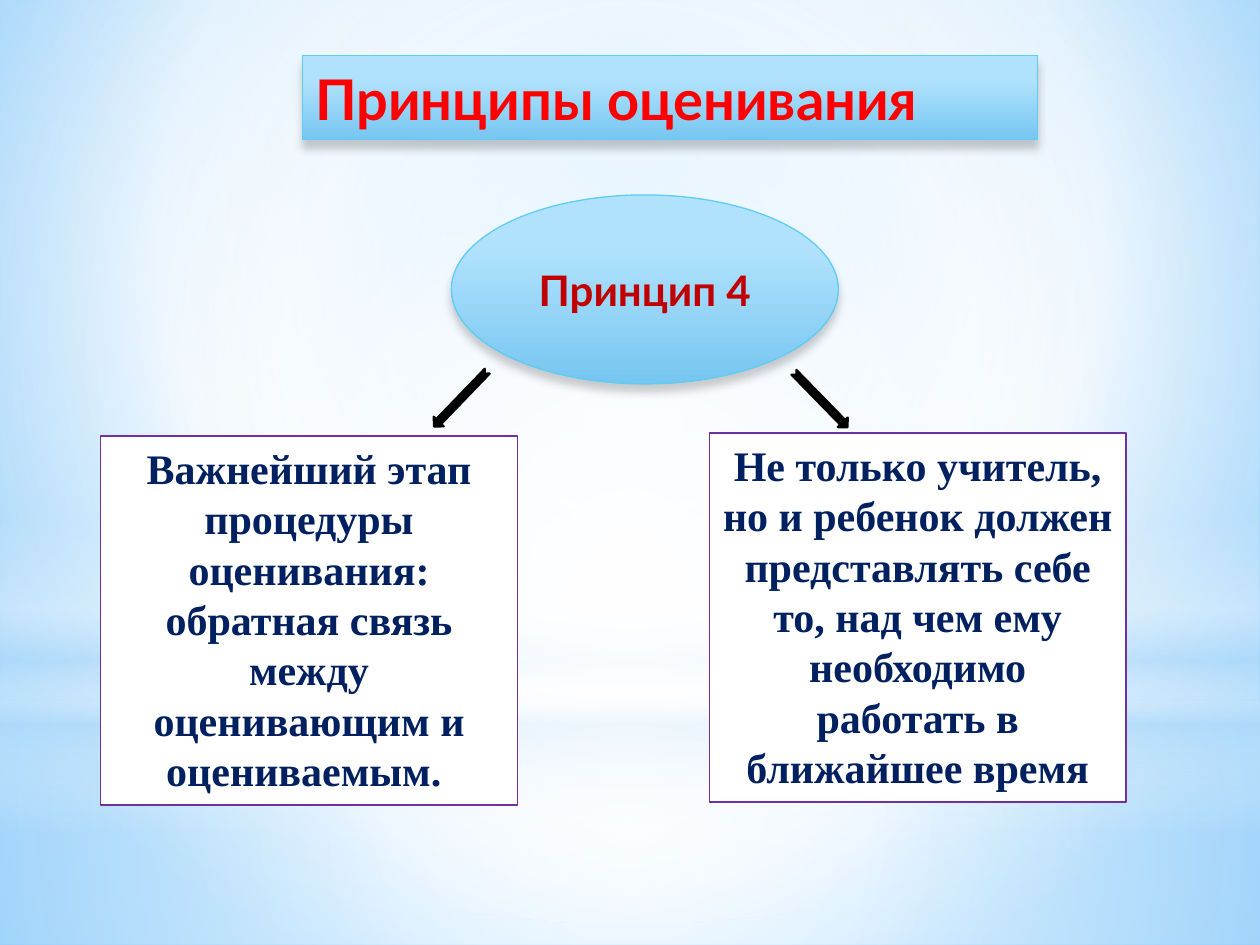
"""Build the slide on the fourth principle of assessment."""
from lxml.etree import SubElement
from pptx import Presentation
from pptx.dml.color import RGBColor
from pptx.enum.shapes import MSO_SHAPE as SHAPE
from pptx.enum.text import MSO_ANCHOR as ANCHOR, MSO_AUTO_SIZE as AUTO, PP_ALIGN as ALIGN
from pptx.oxml import parse_xml
from pptx.oxml.ns import nsdecls, qn
from pptx.util import Cm, Pt

rgb = RGBColor.from_string


def set_gradient(fill, props, stops, focus=None):
    """Fill with (position, colour, opacity) stops, circular around focus or top to bottom."""
    fill.solid()
    marks = "".join(
        f'<a:gs pos="{pos * 1000}"><a:srgbClr val="{color}">'
        f'<a:alpha val="{opacity * 1000}"/></a:srgbClr></a:gs>'
        for pos, color, opacity in stops)
    shade = '<a:lin ang="5400000" scaled="0"/>'
    if focus:
        sides = " ".join(f'{k}="{v * 1000}"' for k, v in zip("ltrb", focus))
        shade = f'<a:path path="circle"><a:fillToRect {sides}/></a:path>'
    grad = parse_xml(f'<a:gradFill {nsdecls("a")} rotWithShape="1">'
                     f'<a:gsLst>{marks}</a:gsLst>{shade}</a:gradFill>')
    props.replace(props.find(qn("a:solidFill")), grad)


def write(sp, text, font, size, color, align):
    """Put one bold run into a shape."""
    tf = sp.text_frame
    tf.word_wrap = True
    p = tf.paragraphs[0]
    p.alignment = align
    r = p.add_run()
    r.text = text
    r.font.name, r.font.size, r.font.bold = font, Pt(size), True
    r.font.color.rgb = rgb(color)


prs = Presentation()
prs.slide_width, prs.slide_height = Cm(25.4), Cm(19.05)
s = prs.slides.add_slide(prs.slide_layouts[5])
title = s.shapes.title

bg_fill = s.background.fill
bg_fill.solid()
set_gradient(bg_fill, s._element.cSld.bg.bgPr,
             [(0, "9ED5FF", 100), (60, "FFFFFF", 100), (100, "5BB9FF", 100)],
             (20, 10, 20, 60))

center = (50, 50, 50, 50)
backdrops = [
    (SHAPE.RECTANGLE, 14.17, 4.88, center,
     [(0, "FFFFFF", 91), (37, "FFFFFF", 76), (100, "B4DCFA", 79)]),
    (SHAPE.RECTANGLE, 0, 14.17, center,
     [(0, "FFFFFF", 89), (48, "FFFFFF", 62), (100, "B4DCFA", 79)]),
    (SHAPE.RECTANGLE, 10.46, 6.35, None,
     [(0, "FFFFFF", 0), (29, "FFFFFF", 30), (45, "B4DCFA", 40),
      (55, "FFFFFF", 26), (65, "B4DCFA", 60), (100, "FFFFFF", 0)]),
    (SHAPE.OVAL, 4.45, 14.17, center,
     [(0, "FFFFFF", 100), (56, "FFFFFF", 0)]),
]
for kind, top, height, focus, stops in backdrops:
    sp = s.shapes.add_shape(kind, 0, Cm(top), prs.slide_width, Cm(height))
    sp.shadow.inherit = False
    sp.line.fill.background()
    set_gradient(sp.fill, sp._element.spPr, stops, focus)

s.shapes._spTree.append(title._element)
title.left, title.top, title.width, title.height = Cm(6.1), Cm(1.12), Cm(14.81), Cm(1.7)
geom = SubElement(title._element.spPr, qn("a:prstGeom"), prst="roundRect")
SubElement(geom, qn("a:avLst"))
principle = s.shapes.add_shape(SHAPE.OVAL, Cm(9.1), Cm(3.93), Cm(7.8), Cm(3.81))

for sp, text, size, color, align in [
        (title, "Принципы оценивания", 32, "FF0000", ALIGN.LEFT),
        (principle, "Принцип 4", 24, "C00000", ALIGN.CENTER)]:
    set_gradient(sp.fill, sp._element.spPr, [(28, "B1E2FD", 100), (100, "76C6F1", 100)])
    sp.line.color.rgb = rgb("5ECCF3")
    sp.line.width = Pt(0.75)
    sp.shadow.inherit = False
    sp._element.spPr.find(qn("a:effectLst")).append(parse_xml(
        f'<a:outerShdw {nsdecls("a")} blurRad="{Pt(5)}" dist="{Pt(4)}" dir="5400000" '
        'rotWithShape="0"><a:srgbClr val="000000"><a:alpha val="20000"/></a:srgbClr>'
        '</a:outerShdw>'))
    sp.text_frame.auto_size = AUTO.NONE
    sp.text_frame.vertical_anchor = ANCHOR.MIDDLE
    write(sp, text, "Lato", size, color, align)

for left, top, text in [
        (2.03, 8.79, "Важнейший этап процедуры оценивания: обратная связь "
                     "между оценивающим и оцениваемым. "),
        (14.3, 8.73, "Не только учитель, но и ребенок должен представлять себе то, "
                     "над чем ему необходимо работать в ближайшее время")]:
    sp = s.shapes.add_textbox(Cm(left), Cm(top), Cm(8.4), Cm(7.44))
    sp.fill.solid()
    sp.fill.fore_color.rgb = rgb("FFFFFF")
    sp.line.color.rgb = rgb("7030A0")
    sp.line.width = Pt(0.75)
    sp.text_frame.auto_size = AUTO.SHAPE_TO_FIT_TEXT
    write(sp, text, "Times New Roman", 24, "002060", ALIGN.CENTER)

for left, top, angle in [(15.77, 7.92, 45.7), (8.51, 7.9, 133.9)]:
    sp = s.shapes.add_shape(SHAPE.NOTCHED_RIGHT_ARROW, Cm(left), Cm(top), Cm(1.55), Cm(0.28))
    sp.rotation = angle
    sp.shadow.inherit = False
    sp.fill.solid()
    sp.fill.fore_color.rgb = rgb("000000")
    sp.line.color.rgb = rgb("000000")
    sp.line.width = Pt(1.25)

prs.save("out.pptx")
